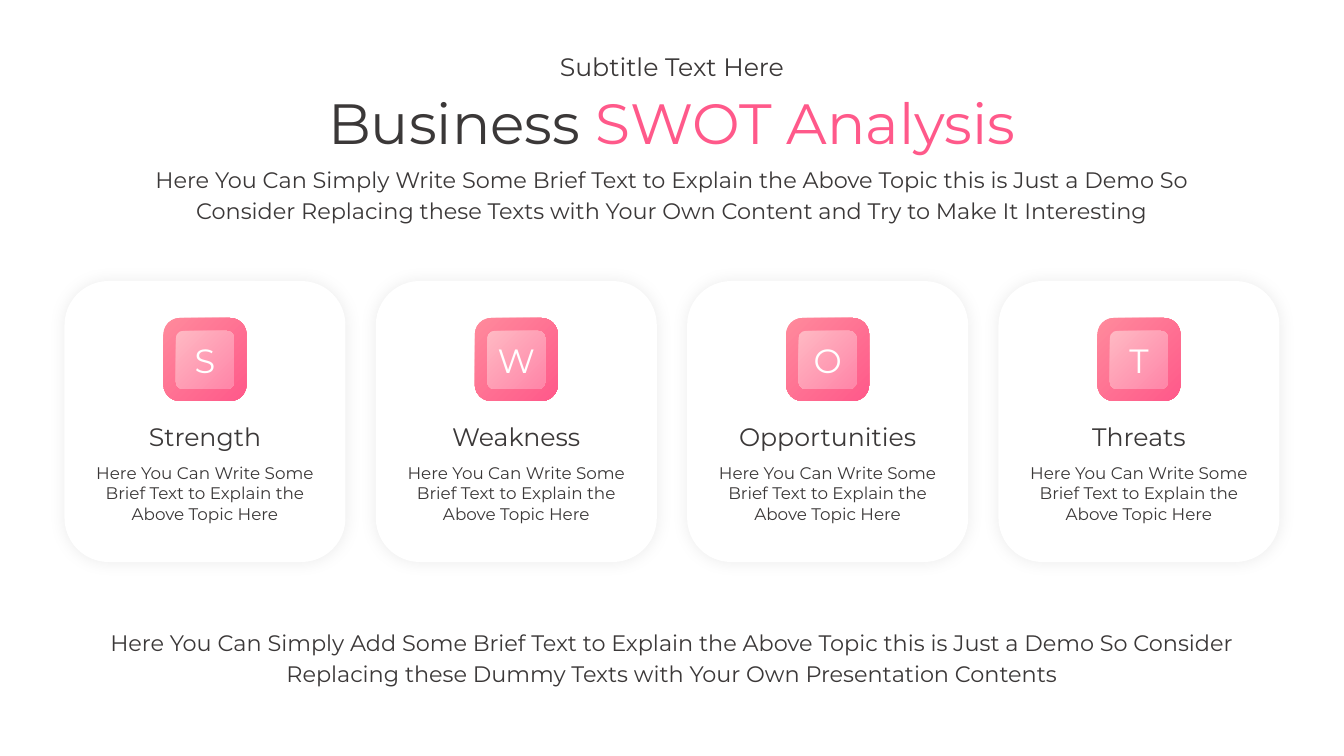
from lxml.etree import SubElement
from pptx import Presentation
from pptx.dml.color import RGBColor
from pptx.enum.shapes import MSO_SHAPE
from pptx.enum.text import MSO_AUTO_SIZE, PP_ALIGN
from pptx.oxml.ns import qn
from pptx.util import Pt

PX = 12192000 / 1344
DARK, PINK, WHITE = "3B3838", "FF598A", "FFFFFF"

presentation = Presentation()
presentation.slide_width = round(1344 * PX)
presentation.slide_height = round(756 * PX)
slide = presentation.slides.add_slide(presentation.slide_layouts[6])


def add_text(center, top, width, height, text, size, color=DARK, spacing=None):
    box = slide.shapes.add_textbox(
        round((center - width / 2) * PX), round(top * PX), round(width * PX), round(height * PX)
    )
    frame = box.text_frame
    frame.text = text
    frame.word_wrap = False
    frame.auto_size = MSO_AUTO_SIZE.SHAPE_TO_FIT_TEXT
    for paragraph in frame.paragraphs:
        paragraph.alignment = PP_ALIGN.CENTER
        if spacing:
            paragraph.line_spacing = Pt(spacing)
        for run in paragraph.runs:
            run.font.name = "Montserrat"
            run.font.size = Pt(size)
            run.font.color.rgb = RGBColor.from_string(color)
    return frame


def add_square(center, top, side, rounding, colors):
    shape = slide.shapes.add_shape(
        MSO_SHAPE.ROUNDED_RECTANGLE,
        round((center - side / 2) * PX), round(top * PX), round(side * PX), round(side * PX),
    )
    shape.adjustments[0] = rounding
    shape.shadow.inherit = False
    shape.line.fill.background()
    if len(colors) == 1:
        shape.fill.solid()
        shape.fill.fore_color.rgb = RGBColor.from_string(colors[0])
        return shape
    shape.fill.gradient()
    for stop, color in zip(shape.fill.gradient_stops, colors):
        stop.color.rgb = RGBColor.from_string(color)
    gradient = shape.element.spPr.find(qn("a:gradFill"))
    gradient.remove(gradient.find(qn("a:lin")))
    radial = SubElement(gradient, qn("a:path"), {"path": "circle"})
    SubElement(radial, qn("a:fillToRect"), {"l": "100000", "t": "100000"})
    return shape


title = add_text(672, 83, 770, 79, "Business ", 40.5).paragraphs[0]
accent = title.add_run()
accent.text = "SWOT Analysis"
accent.font.name = "Montserrat"
accent.font.size = Pt(40.5)
accent.font.color.rgb = RGBColor.from_string(PINK)
add_text(672, 46, 252, 40, "Subtitle Text Here", 18)
add_text(
    672, 157, 1097, 71,
    "Here You Can Simply Write Some Brief Text to Explain the Above Topic this is Just a Demo So\v"
    "Consider Replacing these Texts with Your Own Content and Try to Make It Interesting",
    16, spacing=22,
)

cards = [
    ("S", 42, "Strength", 140),
    ("W", 60, "Weakness", 162),
    ("O", 49, "Opportunities", 210),
    ("T", 42, "Threats", 123),
]
for index, (letter, letter_width, heading, heading_width) in enumerate(cards):
    center = 205 + index * 311.33
    card = add_square(center, 281, 281, 0.157, [WHITE])
    effects = card.element.spPr.find(qn("a:effectLst"))
    shadow = SubElement(
        effects, qn("a:outerShdw"),
        {"blurRad": str(Pt(12)), "dist": "0", "dir": "0", "algn": "ctr", "rotWithShape": "0"},
    )
    shadow_color = SubElement(shadow, qn("a:srgbClr"), {"val": "000000"})
    SubElement(shadow_color, qn("a:alpha"), {"val": "8000"})

    add_text(center, 416, heading_width, 40, heading, 18)
    add_square(center, 318, 83, 0.196, [PINK, "FF8A9C"])
    add_square(center, 331, 58, 0.121, ["FF85A8", "FFB9C3"])
    add_text(center, 335, letter_width, 50, letter, 24, WHITE)
    add_text(
        center, 458, 242, 72,
        "Here You Can Write Some\nBrief Text to Explain the\nAbove Topic Here", 12,
    )

add_text(
    672, 620, 1177, 71,
    "Here You Can Simply Add Some Brief Text to Explain the Above Topic this is Just a Demo So Consider\n"
    "Replacing these Dummy Texts with Your Own Presentation Contents",
    16, spacing=22,
)

presentation.save("out.pptx")
